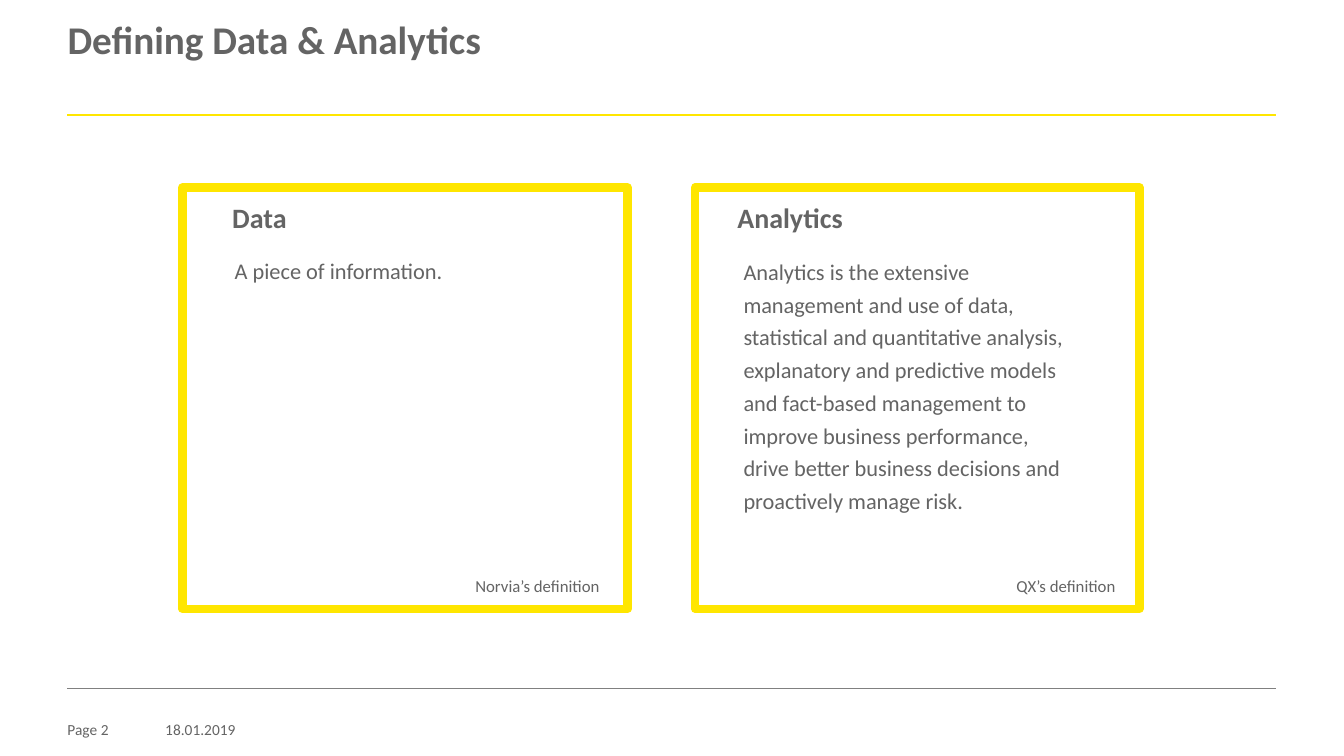
from pptx import Presentation
from pptx import util as u
from pptx.dml.color import RGBColor
from pptx.enum import shapes, text
from pptx.oxml.ns import qn
from lxml import etree

PX = 9144
COLORS = {"ink": "646464", "yellow": "FFE600", "rule": "808080", "white": "FFFFFF"}
CARD_TOP, CARD_HEIGHT = 186, 418
HEADING_INSETS = (10, 5, 10, 5)
ANALYTICS = (
    "Analytics is the extensive management and use of data, statistical and "
    "quantitative analysis, explanatory and predictive models and fact-based "
    "management to improve business performance, drive better business decisions "
    "and proactively manage risk."
)


def px(*lengths):
    return [u.Emu(length * PX) for length in lengths]


def color(name):
    return RGBColor.from_string(COLORS[name])


def write(frame, words, size, bold=False, align=text.PP_ALIGN.LEFT, spacing=None,
          after=0, insets=(0, 0, 0, 0), wrap=True, anchor=text.MSO_ANCHOR.TOP):
    frame.margin_left, frame.margin_top, frame.margin_right, frame.margin_bottom = px(*insets)
    frame.word_wrap = wrap
    frame.auto_size = text.MSO_AUTO_SIZE.NONE
    frame.vertical_anchor = anchor
    frame.text = words
    paragraph = frame.paragraphs[0]
    paragraph.alignment = align
    paragraph.space_before = u.Pt(0)
    paragraph.space_after = u.Pt(after)
    if spacing:
        paragraph.line_spacing = spacing
    paragraph.font.name = "Calibri"
    paragraph.font.size = u.Pt(size)
    paragraph.font.bold = bold
    paragraph.font.color.rgb = color("ink")


def add_label(slide, box, words, size, **style):
    write(slide.shapes.add_textbox(*px(*box)).text_frame, words, size, **style)


def add_title(slide, words):
    title = slide.shapes.title
    title.left, title.top, title.width, title.height = px(67, 22, 1201, 94)
    write(title.text_frame, words, 28, bold=True, spacing=0.85)


def add_rule(slide, top, line_color, weight):
    rule = slide.shapes.add_connector(
        shapes.MSO_CONNECTOR.STRAIGHT, *px(67, top, 1267, top))
    rule.line.color.rgb = color(line_color)
    rule.line.width = u.Pt(weight)
    etree.SubElement(rule._element.spPr, qn("a:effectLst"))


def add_card(slide, left, width, heading, heading_box, heading_align,
             definition, definition_box, source, source_box):
    card = slide.shapes.add_shape(
        shapes.MSO_SHAPE.RECTANGLE, *px(left, CARD_TOP, width, CARD_HEIGHT))
    card.shadow.inherit = False
    card.fill.solid()
    card.fill.fore_color.rgb = color("white")
    card.line.color.rgb = color("yellow")
    card.line.width = u.Pt(6)
    add_label(slide, heading_box, heading, 20, bold=True, align=heading_align,
              insets=HEADING_INSETS)
    add_label(slide, definition_box, definition, 16, spacing=u.Pt(23.4))
    add_label(slide, source_box, source, 12, align=text.PP_ALIGN.CENTER,
              spacing=0.85, after=6, insets=(0, 4, 0, 0))


def add_footer(slide):
    for left, width, words in ((67, 97, "Page 2"), (164, 150, "18.01.2019")):
        add_label(slide, (left, 713, width, 22), words, 11,
                  anchor=text.MSO_ANCHOR.MIDDLE)


def main():
    deck = Presentation()
    deck.slide_width, deck.slide_height = px(1334, 750)
    slide = deck.slides.add_slide(deck.slide_layouts[5])
    add_title(slide, "Defining Data & Analytics")
    add_rule(slide, 114, "yellow", 1.5)
    add_rule(slide, 683, "rule", 0.25)
    add_card(slide, 181, 442, "Data", (217, 194, 81, 44), text.PP_ALIGN.CENTER,
             "A piece of information.", (233, 249, 332, 30),
             "Norvia’s definition", (451, 570, 165, 21))
    add_card(slide, 690, 441, "Analytics", (722, 194, 150, 44), text.PP_ALIGN.LEFT,
             ANALYTICS, (738, 250, 332, 290),
             "QX’s definition", (997, 570, 122, 21))
    add_footer(slide)
    deck.save("out.pptx")


if __name__ == "__main__":
    main()
